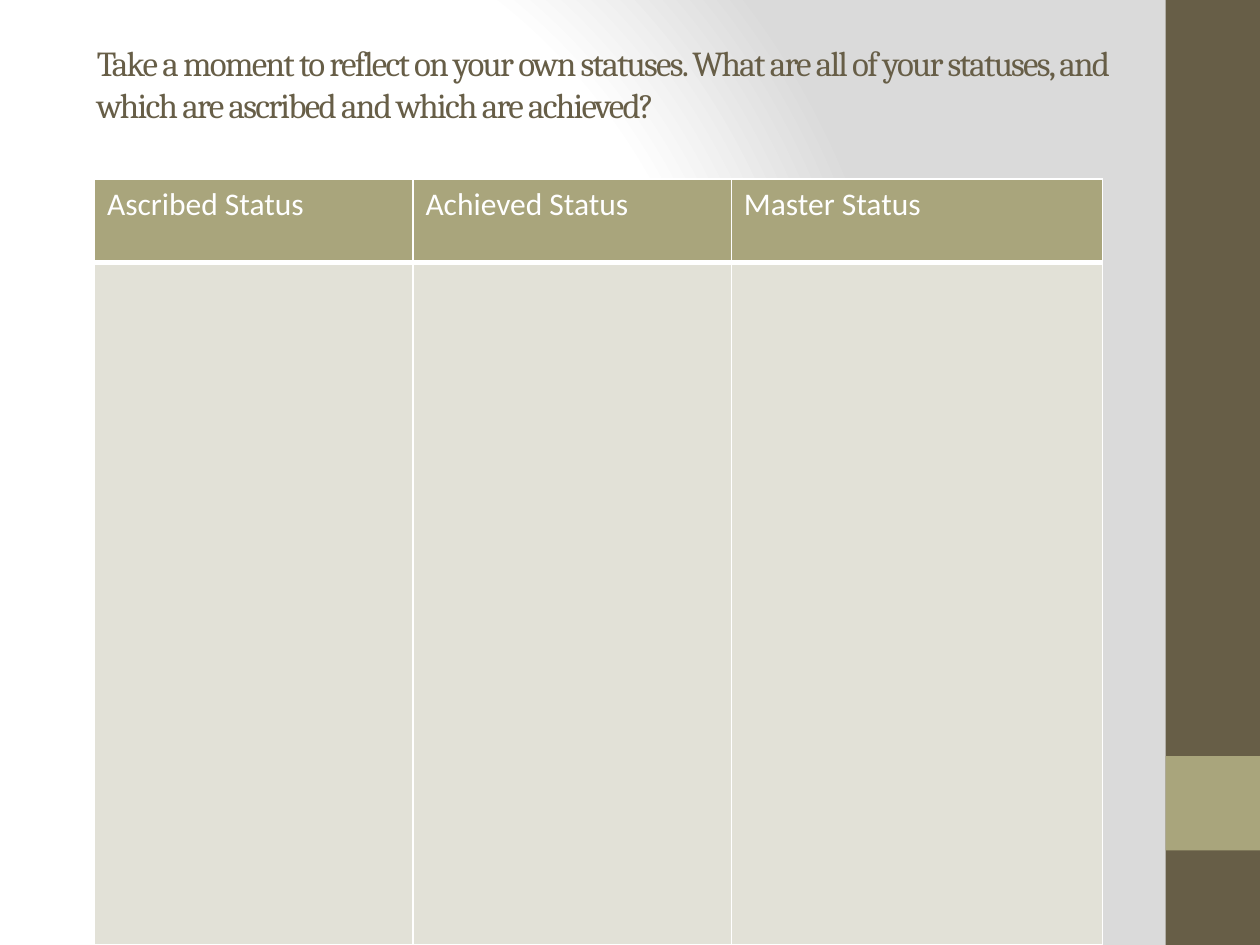
from lxml.etree import SubElement
from pptx import Presentation
from pptx.dml.color import RGBColor
from pptx.enum.shapes import MSO_SHAPE
from pptx.enum.text import MSO_ANCHOR
from pptx.oxml.ns import qn
from pptx.util import Inches, Pt

DARK, OLIVE, PALE, WHITE, GREY = "675E47", "A9A57C", "E2E1D7", "FFFFFF", "DADADA"
HEADS = ["Ascribed Status", "Achieved Status", "Master Status"]
UNIT = 0.25  # grid step in inches: 40 columns by 30 rows


def tint(code):
    return RGBColor.from_string(code)


def grid(*steps):
    return [Inches(step * UNIT) for step in steps]


def write(frame, text, size=18, font="Calibri", color=WHITE, space=None):
    run = frame.paragraphs[0].add_run()
    run.text = text
    run.font.size = Pt(size)
    run.font.name = font
    run.font.color.rgb = tint(color)
    if space is not None:
        run.font._element.set("spc", str(space * 100))


class Deck:
    def __init__(self):
        self.file = Presentation()
        self.file.slide_width, self.file.slide_height = grid(40, 30)
        self.slide = self.file.slides.add_slide(self.file.slide_layouts[6])

    def glow(self, stops, focus):
        """Fill the background with a circular gradient."""
        self.slide.background.fill.gradient()
        fill = next(self.slide._element.iter(qn("a:gradFill")))
        for part in list(fill):
            fill.remove(part)
        marks = SubElement(fill, qn("a:gsLst"))
        for place, color in stops:
            mark = SubElement(marks, qn("a:gs"), pos=str(place * 1000))
            SubElement(mark, qn("a:srgbClr"), val=color)
        ring = SubElement(fill, qn("a:path"), {"path": "circle"})
        sides = {side: str(share * 1000) for side, share in zip("ltrb", focus)}
        SubElement(ring, qn("a:fillToRect"), sides)

    def block(self, col, row, wide, high, color):
        box = self.slide.shapes.add_shape(MSO_SHAPE.RECTANGLE, *grid(col, row, wide, high))
        box.shadow.inherit = False
        box.fill.solid()
        box.fill.fore_color.rgb = tint(color)
        box.line.fill.background()

    def title(self, col, row, wide, high, text, **style):
        frame = self.slide.shapes.add_textbox(*grid(col, row, wide, high)).text_frame
        frame.word_wrap = True
        frame.vertical_anchor = MSO_ANCHOR.TOP
        frame.margin_top = Inches(0.08)
        write(frame, text, **style)

    def cell(self, cell, color, base=1):
        """Borders come before the fill in the cell's XML."""
        props = cell._tc.get_or_add_tcPr()
        for side, width in zip("LRTB", (1, 1, 1, base)):
            line = SubElement(props, qn(f"a:ln{side}"), w=str(Pt(width)))
            SubElement(SubElement(line, qn("a:solidFill")), qn("a:srgbClr"), val=WHITE)
        cell.fill.solid()
        cell.fill.fore_color.rgb = tint(color)

    def table(self, col, row, wides, highs, heads):
        area = grid(col, row, sum(wides), sum(highs))
        table = self.slide.shapes.add_table(len(highs), len(wides), *area).table
        for line, high in zip(table.rows, grid(*highs)):
            line.height = high
        for i, (wide, head) in enumerate(zip(grid(*wides), heads)):
            table.columns[i].width = wide
            self.cell(table.cell(0, i), OLIVE, base=3)
            write(table.cell(0, i).text_frame, head)
            self.cell(table.cell(1, i), PALE)


def main():
    deck = Deck()
    deck.glow([(0, WHITE), (75, WHITE), (100, GREY)], (20, 50, 100, 50))
    # Side band with its accent square
    deck.block(37, 0, 3, 30, DARK)
    deck.block(37, 24, 3, 3, OLIVE)
    # Status table, then the question above it
    deck.table(3, 5.68, (10.11, 10.11, 11.78), (2.66, 21.66), HEADS)
    deck.title(2.68, 1, 33.92, 4.6,
               "Take a moment to reflect on your own statuses. What are all of "
               "your statuses, and which are ascribed and which are achieved?",
               size=20, font="Cambria", color=DARK, space=-1)
    deck.file.save("out.pptx")


if __name__ == "__main__":
    main()
